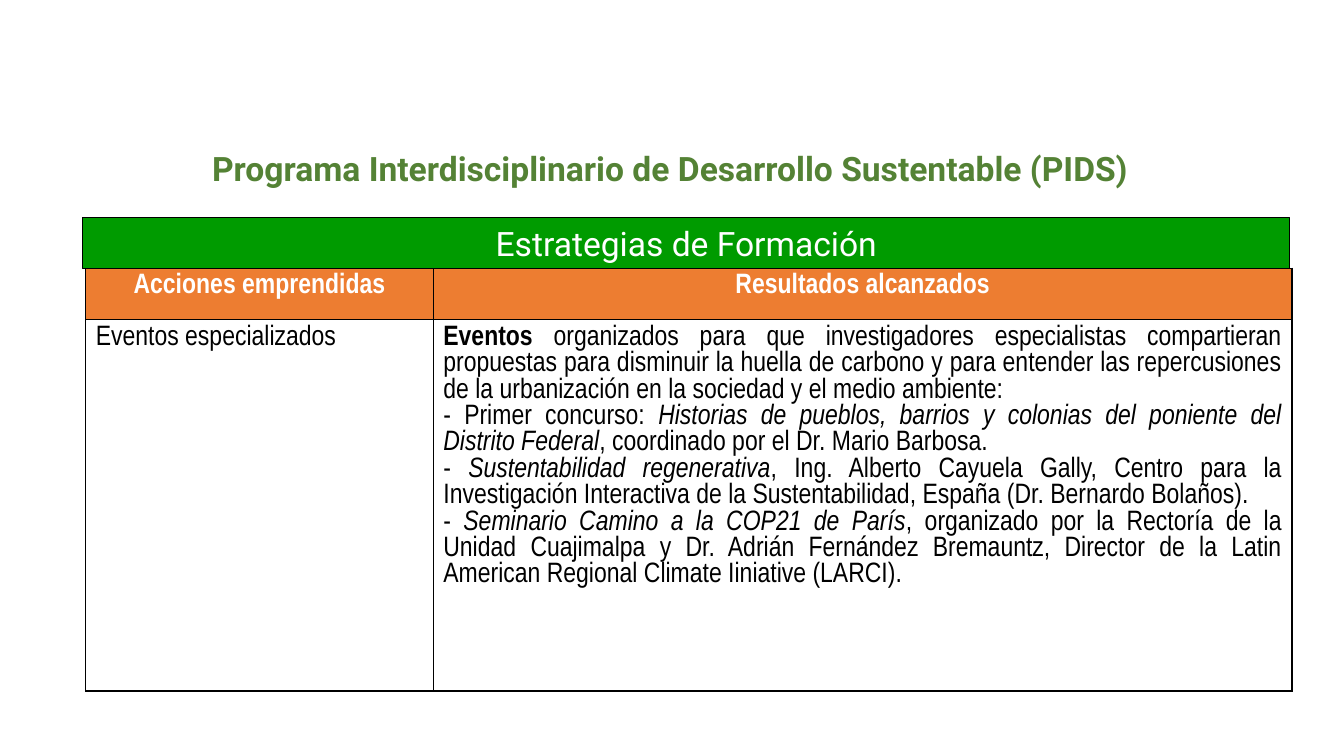
from dataclasses import dataclass

from lxml import etree
from pptx import Presentation
from pptx import util as u
from pptx.dml.color import RGBColor
from pptx.enum import shapes, text
from pptx.oxml import ns


@dataclass(frozen=True)
class Theme:
    """Colours, fonts and type sizes of the slide."""
    title: str = "548235"
    banner: str = "009B00"
    header: str = "ED7D31"
    ink: str = "000000"
    light: str = "FFFFFF"
    heading_font: str = "Roboto"
    table_font: str = "Arial Narrow"
    heading_size: int = 24
    table_size: int = 20


THEME = Theme()
ALIGN = text.PP_ALIGN

TITLE = "Programa Interdisciplinario de Desarrollo Sustentable (PIDS)"
BANNER = "Estrategias de Formación"
HEADERS = ["Acciones emprendidas", "Resultados alcanzados"]
ACTION = "Eventos especializados"
RESULTS = [
    [("Eventos ", "bold"),
     ("organizados para que investigadores especialistas compartieran propuestas para "
      "disminuir la huella de carbono y para entender las repercusiones de la urbanización "
      "en la sociedad y el medio ambiente:", "")],
    [("- Primer concurso: ", ""),
     ("Historias de pueblos, barrios y colonias del poniente del Distrito Federal", "italic"),
     (", coordinado por el Dr. Mario Barbosa.", "")],
    [("- ", ""), ("Sustentabilidad regenerativa", "italic"),
     (", Ing. Alberto Cayuela Gally, Centro para la Investigación Interactiva de la "
      "Sustentabilidad, España (Dr. Bernardo Bolaños).", "")],
    [("- ", ""), ("Seminario Camino a la COP21 de París", "italic"),
     (", organizado por la Rectoría de la Unidad Cuajimalpa y Dr. Adrián Fernández "
      "Bremauntz, Director de la Latin American Regional Climate Iiniative (LARCI).", "")],
]


def rgb(colour):
    """Return the colour object for a hex value."""
    return RGBColor.from_string(colour)


def write(frame, paragraphs, font=THEME.table_font, size=THEME.table_size,
          colour=THEME.ink, bold=False, align=ALIGN.LEFT):
    """Fill a text frame with paragraphs, each a list of (words, style) runs."""
    frame.word_wrap = True
    for index, runs in enumerate(paragraphs):
        paragraph = frame.add_paragraph() if index else frame.paragraphs[0]
        paragraph.alignment = align
        for words, style in runs:
            run = paragraph.add_run()
            run.text = words
            run.font.name = font
            run.font.size = u.Pt(size)
            run.font.bold = bold or style == "bold"
            run.font.italic = style == "italic"
            run.font.color.rgb = rgb(colour)


def place(shape, box):
    """Move a shape to a (left, top, width, height) box in centimetres."""
    shape.left, shape.top, shape.width, shape.height = (u.Cm(length) for length in box)


def add_title(slide, box):
    """Place and format the title placeholder."""
    title = slide.shapes.title
    place(title, box)
    title.text_frame.auto_size = text.MSO_AUTO_SIZE.NONE
    title.text_frame.vertical_anchor = text.MSO_ANCHOR.MIDDLE
    write(title.text_frame, [[(TITLE, "")]], font=THEME.heading_font,
          size=THEME.heading_size, colour=THEME.title, bold=True, align=ALIGN.CENTER)


def add_banner(slide, box):
    """Draw the green band above the table."""
    banner = slide.shapes.add_shape(
        shapes.MSO_SHAPE.RECTANGLE, *(u.Cm(length) for length in box))
    banner.shadow.inherit = False
    banner.fill.solid()
    banner.fill.fore_color.rgb = rgb(THEME.banner)
    banner.line.color.rgb = rgb(THEME.ink)
    banner.line.width = u.Pt(0.75)
    banner.text_frame.vertical_anchor = text.MSO_ANCHOR.MIDDLE
    write(banner.text_frame, [[(BANNER, "")]], font=THEME.heading_font,
          size=THEME.heading_size, colour=THEME.light, align=ALIGN.CENTER)


def add_borders(cell):
    """Draw a thin line on each side of a table cell."""
    properties = cell._tc.get_or_add_tcPr()
    for index, side in enumerate(("lnL", "lnR", "lnT", "lnB")):
        line = etree.Element(ns.qn(f"a:{side}"), w=str(u.Pt(1)))
        fill = etree.SubElement(line, ns.qn("a:solidFill"))
        etree.SubElement(fill, ns.qn("a:srgbClr"), val=THEME.ink)
        properties.insert(index, line)


def add_results_table(slide, box, first_column=8.76, header_height=1.3):
    """Build the table of actions and results inside the box."""
    left, top, width, height = box
    table = slide.shapes.add_table(2, 2, *(u.Cm(length) for length in box)).table
    table.horz_banding = False
    table.columns[0].width = u.Cm(first_column)
    table.columns[1].width = u.Cm(width - first_column)
    table.rows[0].height = u.Cm(header_height)
    table.rows[1].height = u.Cm(height - header_height)
    for column, header in enumerate(HEADERS):
        cell = table.cell(0, column)
        cell.fill.solid()
        cell.fill.fore_color.rgb = rgb(THEME.header)
        write(cell.text_frame, [[(header, "")]], colour=THEME.light, bold=True,
              align=ALIGN.CENTER)
        table.cell(1, column).fill.background()
    write(table.cell(1, 0).text_frame, [[(ACTION, "")]])
    write(table.cell(1, 1).text_frame, RESULTS, align=ALIGN.JUSTIFY)
    for cell in table.iter_cells():
        add_borders(cell)


def main():
    """Build the slide and save it."""
    presentation = Presentation()
    presentation.slide_width, presentation.slide_height = u.Cm(33.87), u.Cm(19.05)
    slide = presentation.slides.add_slide(presentation.slide_layouts[5])
    add_results_table(slide, (2.16, 6.76, 30.4, 10.65))
    add_banner(slide, (2.08, 5.49, 30.43, 1.27))
    add_title(slide, (2.79, 3.61, 28.19, 1.27))
    presentation.save("out.pptx")


if __name__ == "__main__":
    main()
